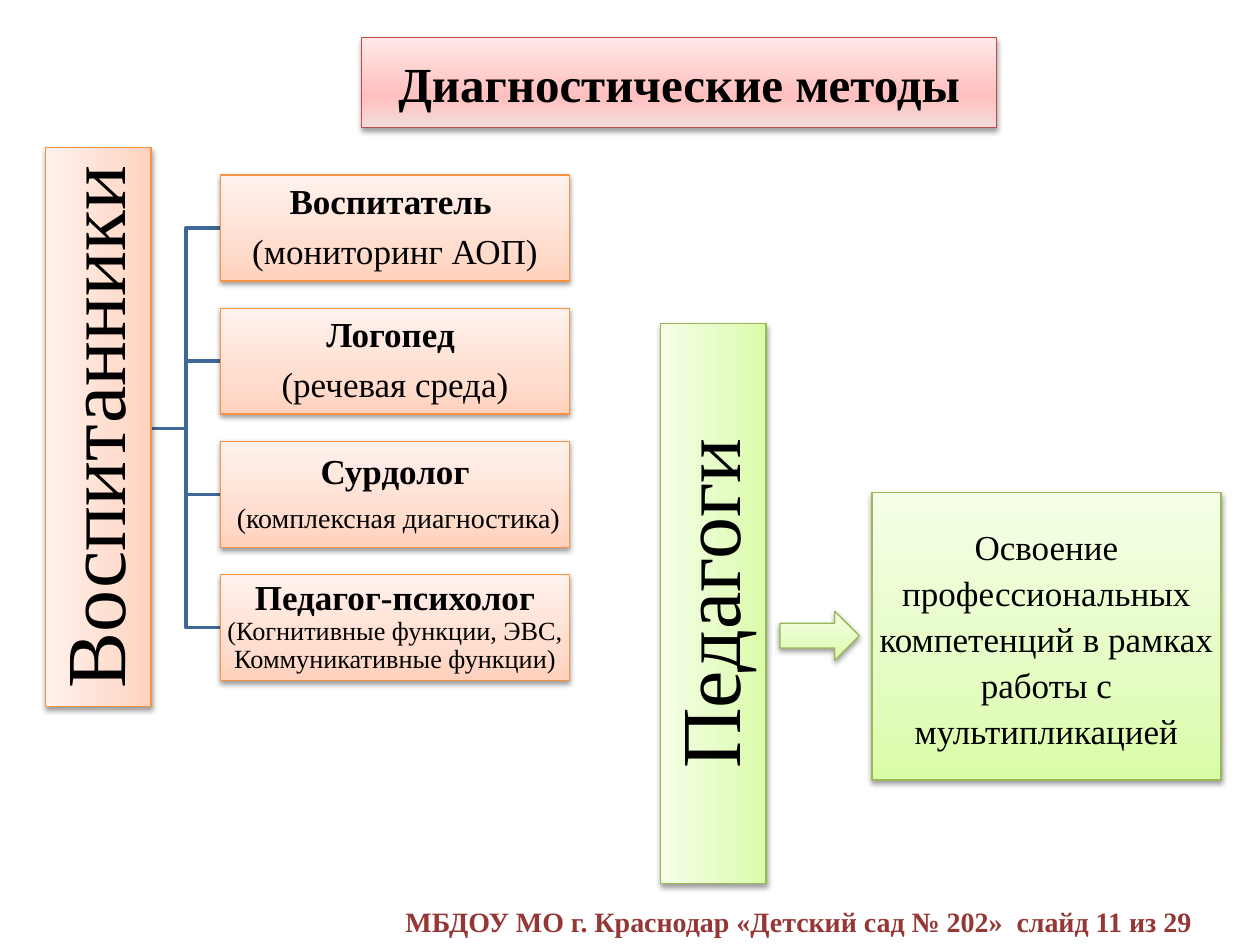
from lxml.etree import SubElement
from pptx import Presentation
from pptx.dml.color import RGBColor
from pptx.enum.shapes import MSO_SHAPE
from pptx.enum.text import MSO_ANCHOR, PP_ALIGN
from pptx.oxml import parse_xml
from pptx.oxml.ns import nsdecls, qn
from pptx.util import Inches, Pt

BLACK = RGBColor(0x00, 0x00, 0x00)
MAROON = RGBColor(0x95, 0x37, 0x35)
BLUE = RGBColor(0x3F, 0x67, 0x97)
RED_LINE = RGBColor(0xBF, 0x4C, 0x48)
ORANGE_LINE = RGBColor(0xF6, 0x92, 0x40)
GREEN_LINE = RGBColor(0x98, 0xB9, 0x55)
FONT = "Times New Roman"

RED = (RED_LINE, [RGBColor(0xF2, 0xDC, 0xDB), RGBColor(0xFF, 0xC0, 0xBF), RGBColor(0xFF, 0xE7, 0xE7)])
ORANGE = (ORANGE_LINE, [RGBColor(0xFF, 0xD2, 0xBD), RGBColor(0xFF, 0xDE, 0xD0), RGBColor(0xFF, 0xF2, 0xED)])
GREEN = (GREEN_LINE, [RGBColor(0xDA, 0xFD, 0xA7), RGBColor(0xE4, 0xFC, 0xC2), RGBColor(0xF5, 0xFF, 0xE7)])
STOPS = (0, 35, 100)

TITLE = [[("Диагностические методы", 28, True)]]
PUPILS = [[("Воспитанники", 48, False)]]
TEACHERS = [[("Педагоги", 48, False)]]
GOAL = [[("Освоение профессиональных компетенций в рамках работы с мультипликацией", 20, False)]]
SPECIALISTS = [
    [[("Воспитатель ", 20, True)], [("(мониторинг АОП)", 20, False)]],
    [[("Логопед ", 20, True)], [("(речевая среда)", 20, False)]],
    [[("Сурдолог", 20, True)], [(" (комплексная диагностика)", 16, False)]],
    [[("Педагог-психолог ", 20, True), ("(Когнитивные функции, ЭВС, Коммуникативные функции)", 15, False)]],
]
FOOTER = "МБДОУ МО г. Краснодар «Детский сад № 202»  слайд 11 из 29"

CARD_LEFT, CARD_WIDTH, CARD_HEIGHT = 1.75, 2.77, 0.84
FIRST_TOP, LAST_TOP = 1.39, 4.56
BANNER_LENGTH, BANNER_WIDTH = 4.44, 0.84
TRUNK_LEFT, TRUNK_MIDDLE = 1.2, 3.4


def add_shadow(shape):
    effects = parse_xml(
        f'<a:effectLst {nsdecls("a")}><a:outerShdw blurRad="40000" dist="20000" dir="5400000" '
        'rotWithShape="0"><a:srgbClr val="000000"><a:alpha val="38000"/></a:srgbClr>'
        '</a:outerShdw></a:effectLst>')
    shape.shadow.inherit = True
    shape.line._get_or_add_ln().addnext(effects)


def add_panel(page, theme, left, top, width, height, kind=MSO_SHAPE.RECTANGLE):
    line, colors = theme
    shape = page.shapes.add_shape(kind, Inches(left), Inches(top), Inches(width), Inches(height))
    shape.fill.gradient()
    shape.fill.gradient_angle = 90
    stop_list = shape._element.spPr.find(qn("a:gradFill")).find(qn("a:gsLst"))
    for stop in list(stop_list):
        stop_list.remove(stop)
    for position, color in zip(STOPS, colors):
        stop = SubElement(stop_list, qn("a:gs"), pos=str(position * 1000))
        SubElement(stop, qn("a:srgbClr"), val=str(color))
    shape.line.color.rgb = line
    shape.line.width = Pt(0.75)
    add_shadow(shape)
    return shape


def write(shape, paragraphs, inset=None, spacing=None, after=0):
    frame = shape.text_frame
    frame.word_wrap = True
    frame.vertical_anchor = MSO_ANCHOR.MIDDLE
    if inset is not None:
        frame.margin_left = frame.margin_right = Inches(inset)
        frame.margin_top = frame.margin_bottom = Inches(inset)
    for index, spans in enumerate(paragraphs):
        para = frame.add_paragraph() if index else frame.paragraphs[0]
        para.alignment = PP_ALIGN.CENTER
        if spacing:
            para.line_spacing = spacing
        para.space_after = Pt(after * spans[0][1])
        para.font.name = FONT
        para.font.color.rgb = BLACK
        for text, size, bold in spans:
            span = para.add_run()
            span.text = text
            span.font.name = FONT
            span.font.size = Pt(size)
            span.font.bold = bold
            span.font.color.rgb = BLACK


def add_branch(page, card_middle):
    bend = (TRUNK_LEFT + CARD_LEFT) / 2
    builder = page.shapes.build_freeform(Inches(TRUNK_LEFT), Inches(TRUNK_MIDDLE))
    builder.add_line_segments(
        [(Inches(x), Inches(y)) for x, y in
         [(bend, TRUNK_MIDDLE), (bend, card_middle), (CARD_LEFT, card_middle)]], close=False)
    branch = builder.convert_to_shape()
    branch.fill.background()
    branch.line.color.rgb = BLUE
    branch.line.width = Pt(2)
    branch.shadow.inherit = False


def add_banner(page, theme, left, top, paragraphs):
    banner = add_panel(page, theme, left, top, BANNER_LENGTH, BANNER_WIDTH)
    banner.rotation = 270
    write(banner, paragraphs, 0.03, 0.9, 0.35)


def main():
    deck = Presentation()
    deck.slide_width, deck.slide_height = Inches(10), Inches(7.5)
    page = deck.slides.add_slide(deck.slide_layouts[6])

    write(add_panel(page, RED, 2.87, 0.3, 5.04, 0.71), TITLE)

    pitch = (LAST_TOP - FIRST_TOP) / (len(SPECIALISTS) - 1)
    tops = [FIRST_TOP + pitch * index for index in range(len(SPECIALISTS))]
    for top in tops:
        add_branch(page, top + CARD_HEIGHT / 2)
    add_banner(page, ORANGE, -1.44, 2.97, PUPILS)
    for top, paragraphs in zip(tops, SPECIALISTS):
        card = add_panel(page, ORANGE, CARD_LEFT, top, CARD_WIDTH, CARD_HEIGHT)
        write(card, paragraphs, 0.01, 0.9, 0.35)

    add_banner(page, GREEN, 3.44, 4.37, TEACHERS)
    write(add_panel(page, GREEN, 6.92, 3.91, CARD_WIDTH, 2.28), GOAL, 0.01, 1.1)
    add_panel(page, GREEN, 6.19, 4.85, 0.63, 0.39, MSO_SHAPE.RIGHT_ARROW)

    footer = page.shapes.add_textbox(Inches(3.12), Inches(7.13), Inches(6.54), Inches(0.37))
    footer.text_frame.word_wrap = False
    para = footer.text_frame.paragraphs[0]
    para.text = FOOTER
    para.font.name = FONT
    para.font.size = Pt(16)
    para.font.bold = True
    para.font.color.rgb = MAROON

    deck.save("out.pptx")


if __name__ == "__main__":
    main()
